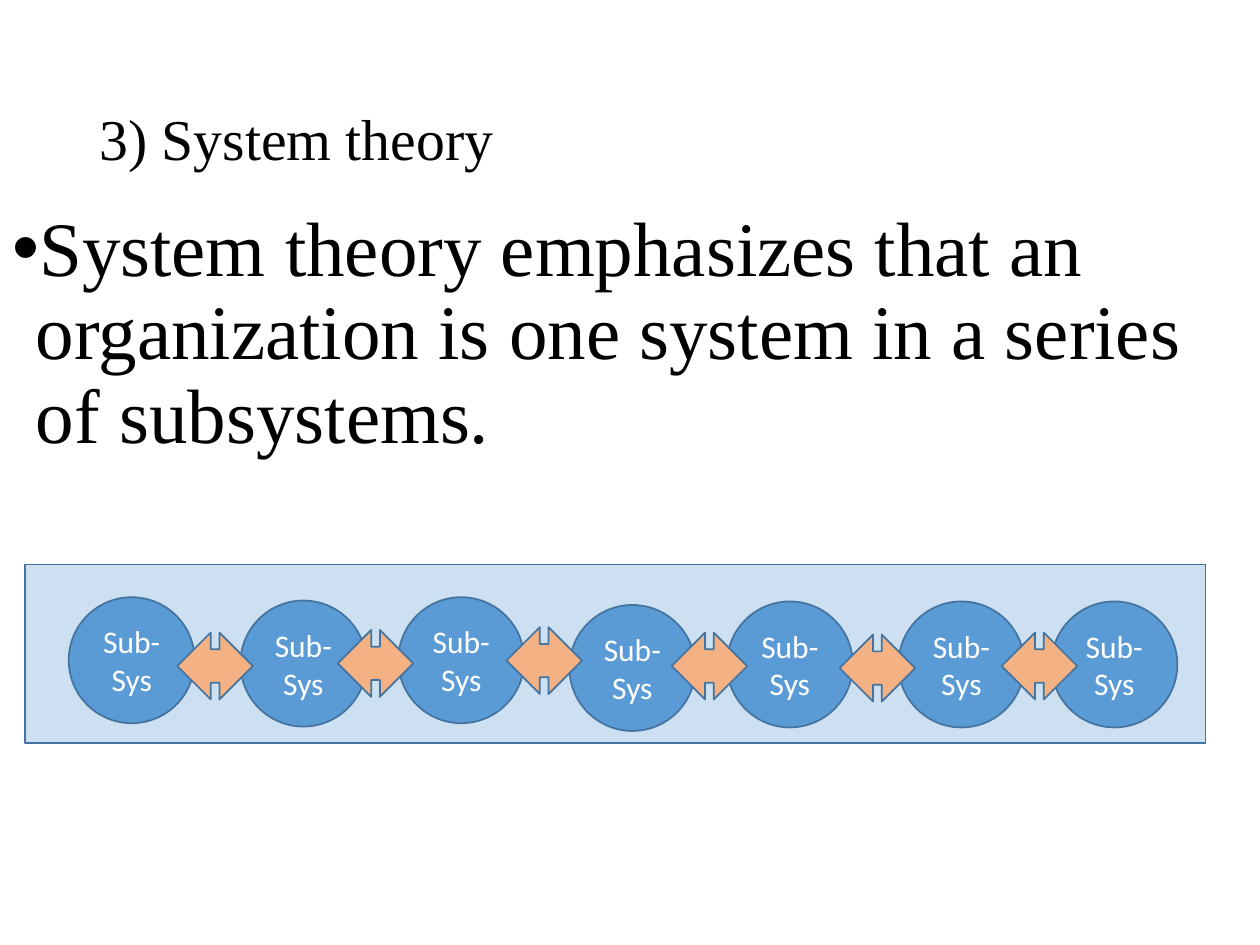
"""Builds the system theory slide with its chain of linked subsystems."""
from typing import NamedTuple

from lxml.etree import SubElement
from pptx import Presentation
from pptx.dml.color import RGBColor
from pptx.enum.shapes import MSO_SHAPE
from pptx.enum.text import MSO_ANCHOR, MSO_AUTO_SIZE, PP_ALIGN
from pptx.oxml.ns import qn
from pptx.shapes.autoshape import Shape
from pptx.slide import Slide
from pptx.text.text import _Paragraph as Paragraph
from pptx.util import Pt

BLACK = RGBColor(0x00, 0x00, 0x00)
WHITE = RGBColor(0xFF, 0xFF, 0xFF)
BLUE = RGBColor(0x5B, 0x9B, 0xD5)
DARK_BLUE = RGBColor(0x43, 0x73, 0x9E)
ORANGE = RGBColor(0xF4, 0xB1, 0x83)
SERIF = "Times New Roman"
SANS = "Calibri"


class Box(NamedTuple):
    left: float
    top: float
    width: float
    height: float

    def lengths(self) -> list[Pt]:
        return [Pt(value) for value in self]


class Spot(NamedTuple):
    left: float
    top: float


HEADING = Box(49.5, 28.75, 621, 104.4)
STATEMENT = Box(0, 116.6, 720, 396.7)
ORGANIZATION = Box(14.4, 322.5, 674.6, 102.2)
SUBSYSTEM_SIZE = (72, 72)
LINK_SIZE = (43.2, 38.2)
SUBSYSTEMS = [
    Spot(39.3, 341.3), Spot(137.4, 343.2), Spot(227.6, 341.3), Spot(325.4, 345.7),
    Spot(415.4, 343.7), Spot(513.4, 343.7), Spot(600.8, 343.7),
]
LINKS = [
    Spot(101.3, 361.5), Spot(193, 360), Spot(289.4, 358.4),
    Spot(383.8, 361.5), Spot(479.8, 362.7), Spot(572.4, 361.5),
]


def format_text(paragraph: Paragraph, font: str, size: float, color: RGBColor) -> None:
    paragraph.font.name = font
    paragraph.font.size = Pt(size)
    paragraph.font.color.rgb = color


def add_outlined(slide: Slide, kind: MSO_SHAPE, box: Box, fill: RGBColor) -> Shape:
    shape = slide.shapes.add_shape(kind, *box.lengths())
    shape.shadow.inherit = False
    shape.fill.solid()
    shape.fill.fore_color.rgb = fill
    shape.line.color.rgb = DARK_BLUE
    shape.line.width = Pt(1)
    return shape


def add_heading(slide: Slide) -> None:
    heading = slide.shapes.title
    heading.left, heading.top, heading.width, heading.height = HEADING.lengths()
    frame = heading.text_frame
    frame.text = "3) System theory"
    frame.auto_size = MSO_AUTO_SIZE.NONE
    frame.vertical_anchor = MSO_ANCHOR.MIDDLE
    paragraph = frame.paragraphs[0]
    paragraph.alignment = PP_ALIGN.LEFT
    paragraph.line_spacing = 0.9
    format_text(paragraph, SERIF, 33, BLACK)


def add_statement(slide: Slide) -> None:
    frame = slide.shapes.add_textbox(*STATEMENT.lengths()).text_frame
    frame.word_wrap = True
    paragraph = frame.paragraphs[0]
    paragraph.text = (
        "System theory emphasizes that an organization "
        "is one system in a series of subsystems."
    )
    paragraph.line_spacing = 0.9
    paragraph.space_before = Pt(7.5)
    format_text(paragraph, SERIF, 44, BLACK)
    properties = paragraph._p.get_or_add_pPr()
    properties.set("marL", str(Pt(13.5)))
    properties.set("indent", str(Pt(-13.5)))
    bullet_font = properties.makeelement(qn("a:buFont"), {"typeface": "Arial"})
    bullet = properties.makeelement(qn("a:buChar"), {"char": "•"})
    position = list(properties).index(properties.find(qn("a:defRPr")))
    properties.insert(position, bullet_font)
    properties.insert(position + 1, bullet)


def add_organization(slide: Slide) -> None:
    organization = add_outlined(slide, MSO_SHAPE.RECTANGLE, ORGANIZATION, BLUE)
    color = organization._element.spPr.find(qn("a:solidFill"))[0]
    SubElement(color, qn("a:alpha"), val="31000")


def add_subsystem(slide: Slide, spot: Spot) -> None:
    subsystem = add_outlined(slide, MSO_SHAPE.OVAL, Box(*spot, *SUBSYSTEM_SIZE), BLUE)
    frame = subsystem.text_frame
    frame.text = "Sub-Sys"
    frame.word_wrap = True
    frame.vertical_anchor = MSO_ANCHOR.MIDDLE
    frame.paragraphs[0].alignment = PP_ALIGN.CENTER
    format_text(frame.paragraphs[0], SANS, 18, WHITE)


def main() -> None:
    presentation = Presentation()
    presentation.slide_width = Pt(720)
    presentation.slide_height = Pt(540)
    slide = presentation.slides.add_slide(presentation.slide_layouts.get_by_name("Title Only"))
    add_heading(slide)
    add_statement(slide)
    add_organization(slide)
    for spot in SUBSYSTEMS:
        add_subsystem(slide, spot)
    for spot in LINKS:
        add_outlined(slide, MSO_SHAPE.LEFT_RIGHT_ARROW, Box(*spot, *LINK_SIZE), ORANGE)
    presentation.save("out.pptx")


if __name__ == "__main__":
    main()
